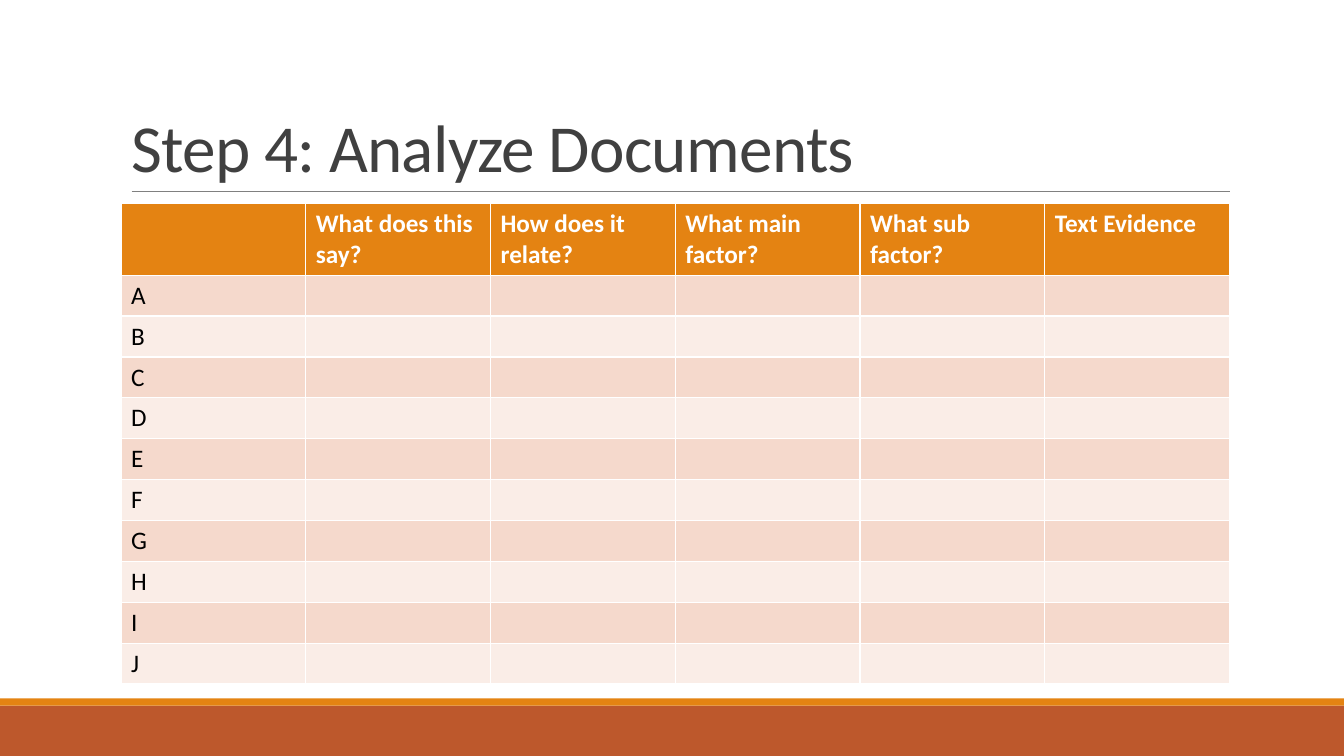
from pptx import Presentation
from pptx.dml.color import RGBColor
from pptx.enum.shapes import MSO_CONNECTOR, MSO_SHAPE
from pptx.enum.text import MSO_ANCHOR, MSO_AUTO_SIZE, PP_ALIGN
from pptx.oxml.ns import qn
from pptx.util import Cm, Pt
from lxml.etree import SubElement

RUST = RGBColor(0xBD, 0x58, 0x2C)
ORANGE = RGBColor(0xE4, 0x83, 0x12)
GRAY = RGBColor(0x80, 0x80, 0x80)
DARK = RGBColor(0x40, 0x40, 0x40)
WHITE = RGBColor(0xFF, 0xFF, 0xFF)
BLACK = RGBColor(0, 0, 0)
BANDS = (RGBColor(0xF5, 0xD9, 0xCC), RGBColor(0xFA, 0xED, 0xE7))
FONT = "Calibri"
HEADS = ["", "What does this say?", "How does it relate?",
         "What main factor?", "What sub factor?", "Text Evidence"]
LETTERS = "ABCDEFGHIJ"

deck = Presentation()
deck.slide_width, deck.slide_height = Cm(33.87), Cm(19.05)
slide = deck.slides.add_slide(deck.slide_layouts[5])
shapes = slide.shapes

# Footer bars
for top, height, color in ((17.78, 1.27, RUST), (17.6, 0.18, ORANGE)):
    bar = shapes.add_shape(MSO_SHAPE.RECTANGLE, 0, Cm(top),
                           deck.slide_width, Cm(height))
    bar.shadow.inherit = False
    bar.fill.solid()
    bar.fill.fore_color.rgb = color
    bar.line.fill.background()

# Title and its rule
rule = shapes.add_connector(MSO_CONNECTOR.STRAIGHT,
                            Cm(3.32), Cm(4.83), Cm(31), Cm(4.83))
rule.line.color.rgb = GRAY
rule.line.width = Pt(0.5)
SubElement(rule._element.spPr, qn("a:effectLst"))

title = shapes.title
title.left, title.top, title.width, title.height = (
    Cm(3.05), Cm(0.79), Cm(27.94), Cm(4.03))
frame = title.text_frame
frame.text = "Step 4: Analyze Documents"
frame.auto_size = MSO_AUTO_SIZE.NONE
frame.vertical_anchor = MSO_ANCHOR.BOTTOM
para = frame.paragraphs[0]
para.alignment = PP_ALIGN.LEFT
para.line_spacing = 0.85
para.font.size = Pt(48)
para.font.name = FONT
para.font.color.rgb = DARK
para.runs[0]._r.get_or_add_rPr().set("spc", "-50")

# Document table; the default table style draws the white borders
rows = [HEADS] + [[letter] + [""] * (len(HEADS) - 1) for letter in LETTERS]
table = shapes.add_table(len(rows), len(HEADS), Cm(3.05), Cm(5.13),
                         Cm(27.94), Cm(12.08)).table
for r, texts in enumerate(rows):
    head = r == 0
    table.rows[r].height = Cm(1.78 if head else 1.03)
    for c, text in enumerate(texts):
        cell = table.cell(r, c)
        cell.text = text
        cell.fill.solid()
        cell.fill.fore_color.rgb = ORANGE if head else BANDS[(r - 1) % 2]
        font = cell.text_frame.paragraphs[0].font
        font.size = Pt(18)
        font.name = FONT
        font.bold = head
        font.color.rgb = WHITE if head else BLACK

deck.save("out.pptx")
